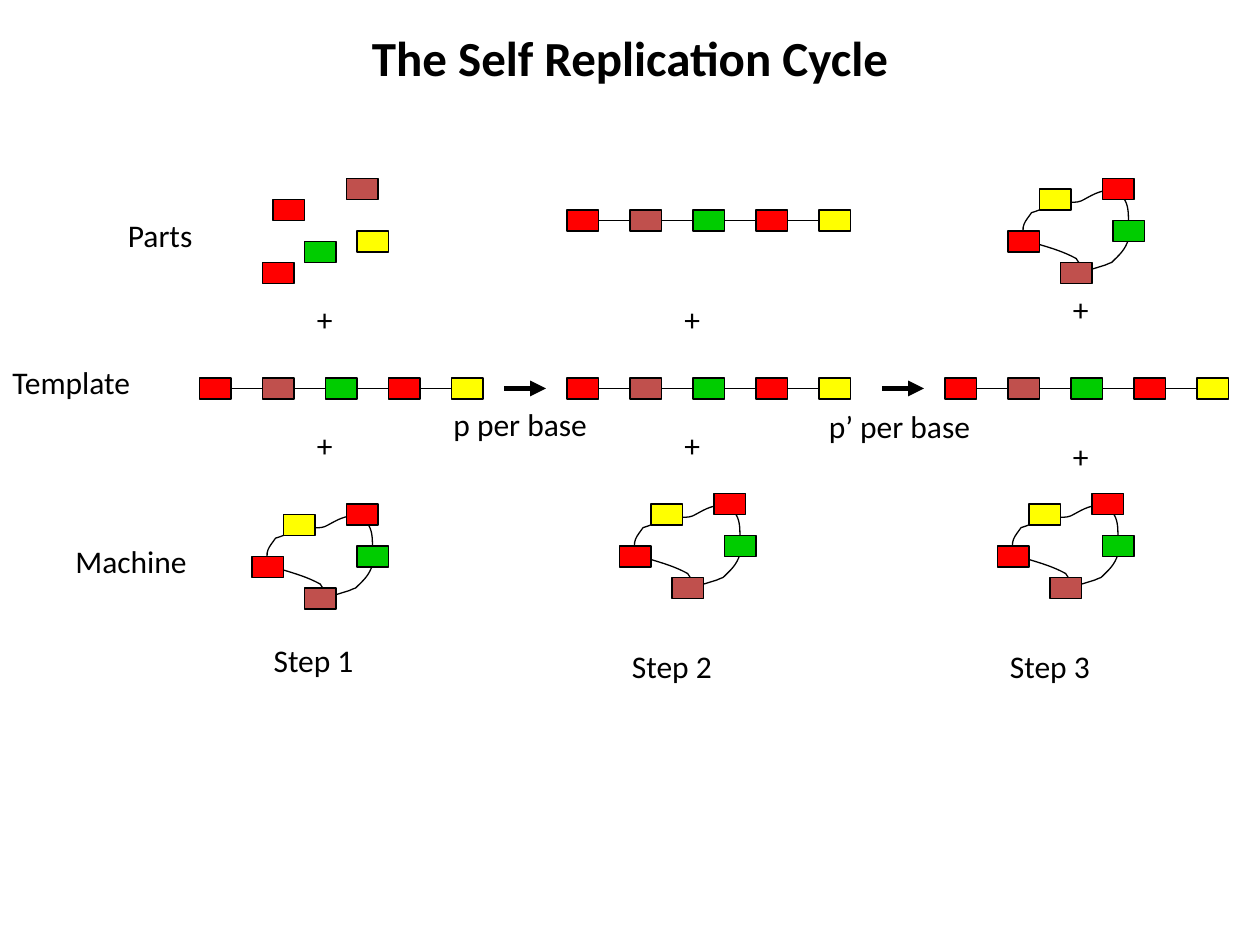
from dataclasses import dataclass

from lxml.etree import SubElement
from pptx import Presentation
from pptx.dml.color import RGBColor
from pptx.enum.shapes import MSO_CONNECTOR as Connector, MSO_SHAPE as Preset
from pptx.enum.text import MSO_ANCHOR as Anchor, PP_ALIGN as Align
from pptx.oxml.ns import qn
from pptx.util import Pt

PX = 9525  # EMU in one px, 96 px to the inch


@dataclass(frozen=True)
class Theme:
    ink: str = "000000"
    red: str = "FF0000"
    brown: str = "C0504D"
    green: str = "00CC00"
    yellow: str = "FFFF00"
    font: str = "Calibri"
    title_size: int = 28
    label_size: int = 18
    thin: float = 0.75
    thick: float = 3


THEME = Theme()
BLOCK_WIDTH, BLOCK_HEIGHT = 24, 16
CHAIN_PITCH = 48
CHAIN_COLORS = (THEME.red, THEME.brown, THEME.green, THEME.red, THEME.yellow)

# Machine: blocks on a closed loop, as offsets from its top left corner
MACHINE_BLOCKS = (
    (80, 32, THEME.green), (72, 0, THEME.red), (24, 8, THEME.yellow),
    (0, 40, THEME.red), (40, 64, THEME.brown),
)
LOOP_START = (53, 72)
LOOP_CURVES = (  # two control points and an end point each
    ((68, 68), (61, 70), (74, 66)),
    ((76, 65), (79, 64), (79, 64)),
    ((85, 58), (89, 55), (92, 46)),
    ((91, 26), (95, 17), (80, 8)),
    ((69, 10), (67, 11), (58, 16)),
    ((52, 20), (43, 17), (36, 18)),
    ((35, 18), (34, 19), (32, 19)),
    ((31, 20), (29, 22), (28, 22)),
    ((25, 24), (18, 26), (18, 26)),
    ((14, 32), (8, 37), (14, 46)),
    ((15, 49), (20, 49), (23, 50)),
    ((33, 53), (43, 56), (52, 61)),
    ((55, 66), (59, 69), (53, 72)),
)


class Diagram:
    def __init__(self, slide, theme):
        self.slide = slide
        self.shapes = slide.shapes
        self.theme = theme

    def outline(self, shape, width):
        shape.line.color.rgb = RGBColor.from_string(self.theme.ink)
        shape.line.width = Pt(width)

    def block(self, x, y, color):
        shape = self.shapes.add_shape(
            Preset.RECTANGLE, x * PX, y * PX, BLOCK_WIDTH * PX, BLOCK_HEIGHT * PX)
        shape.shadow.inherit = False
        shape.fill.solid()
        shape.fill.fore_color.rgb = RGBColor.from_string(color)
        self.outline(shape, self.theme.thin)
        return shape

    def line(self, x1, y1, x2, y2, width):
        connector = self.shapes.add_connector(
            Connector.STRAIGHT, x1 * PX, y1 * PX, x2 * PX, y2 * PX)
        self.outline(connector, width)
        SubElement(connector._element.spPr, qn("a:effectLst"))
        return connector

    def arrow(self, x, y, length):
        connector = self.line(x, y, x + length, y, self.theme.thick)
        SubElement(connector.line._get_or_add_ln(), qn("a:tailEnd"), type="triangle")

    def chain(self, x, y):
        blocks = [self.block(x + i * CHAIN_PITCH, y, color)
                  for i, color in enumerate(CHAIN_COLORS)]
        middle = y + BLOCK_HEIGHT // 2
        for i, (left, right) in enumerate(zip(blocks, blocks[1:])):
            start = x + i * CHAIN_PITCH
            link = self.line(start + BLOCK_WIDTH, middle,
                             start + CHAIN_PITCH, middle, self.theme.thin)
            link.begin_connect(left, 3)
            link.end_connect(right, 1)

    def loop(self, x, y):
        builder = self.shapes.build_freeform(*LOOP_START, scale=PX)
        builder.add_line_segments(
            [point for curve in LOOP_CURVES for point in curve], close=True)
        shape = builder.convert_to_shape(x * PX, y * PX)
        shape.shadow.inherit = False
        shape.fill.background()
        self.outline(shape, self.theme.thin)
        # Each three vertices become one cubic curve
        segments = list(shape._element.iter(qn("a:lnTo")))
        for i in range(0, len(LOOP_CURVES) * 3, 3):
            first, second, third = segments[i:i + 3]
            first.tag = qn("a:cubicBezTo")
            for segment in (second, third):
                first.append(segment[0])
                segment.getparent().remove(segment)

    def machine(self, x, y):
        self.loop(x, y)
        for dx, dy, color in MACHINE_BLOCKS:
            self.block(x + dx, y + dy, color)

    def text(self, words, x, y, width, height=48, size=None, bold=False,
             align=Align.LEFT):
        box = self.shapes.add_textbox(x * PX, y * PX, width * PX, height * PX)
        frame = box.text_frame
        frame.word_wrap = True
        frame.vertical_anchor = Anchor.TOP
        paragraph = frame.paragraphs[0]
        paragraph.alignment = align
        run = paragraph.add_run()
        run.text = words
        run.font.name = self.theme.font
        run.font.size = Pt(size or self.theme.label_size)
        run.font.bold = bold
        run.font.color.rgb = RGBColor.from_string(self.theme.ink)


def main():
    presentation = Presentation()
    presentation.slide_width, presentation.slide_height = 960 * PX, 720 * PX
    slide = presentation.slides.add_slide(presentation.slide_layouts[6])
    diagram = Diagram(slide, THEME)

    # Title
    diagram.text("The Self Replication Cycle", 0, 16, 960, 55,
                 size=THEME.title_size, bold=True, align=Align.CENTER)

    # Row labels
    for words, x, y, width in (("Parts", 88, 160, 94), ("Template", 0, 272, 153),
                               ("Machine", 48, 408, 140)):
        diagram.text(words, x, y, width)

    # Parts: loose, chained, then folded into a new machine
    for x, y, color in ((264, 136, THEME.brown), (232, 184, THEME.green),
                        (208, 152, THEME.red), (272, 176, THEME.yellow),
                        (200, 200, THEME.red)):
        diagram.block(x, y, color)
    diagram.chain(432, 160)
    diagram.machine(768, 136)

    # Templates
    for x in (152, 432, 720):
        diagram.chain(x, 288)

    # Machines
    for x, y in ((192, 384), (472, 376), (760, 376)):
        diagram.machine(x, y)

    # Plus signs above and below each template
    for x, upper, lower in ((232, 224, 320), (512, 224, 320), (808, 216, 328)):
        for y in (upper, lower):
            diagram.text("+", x, y, 38)

    # Step names
    for step, (x, y) in enumerate(((199, 484), (472, 488), (760, 488)), 1):
        diagram.text(f"Step {step}", x, y, 111)

    # Transitions between steps
    for x in (384, 672):
        diagram.arrow(x, 296, 32)
    diagram.text("p per base", 336, 304, 132, 38)
    diagram.text("p’ per base", 622, 305, 138, 38)

    presentation.save("out.pptx")


if __name__ == "__main__":
    main()
